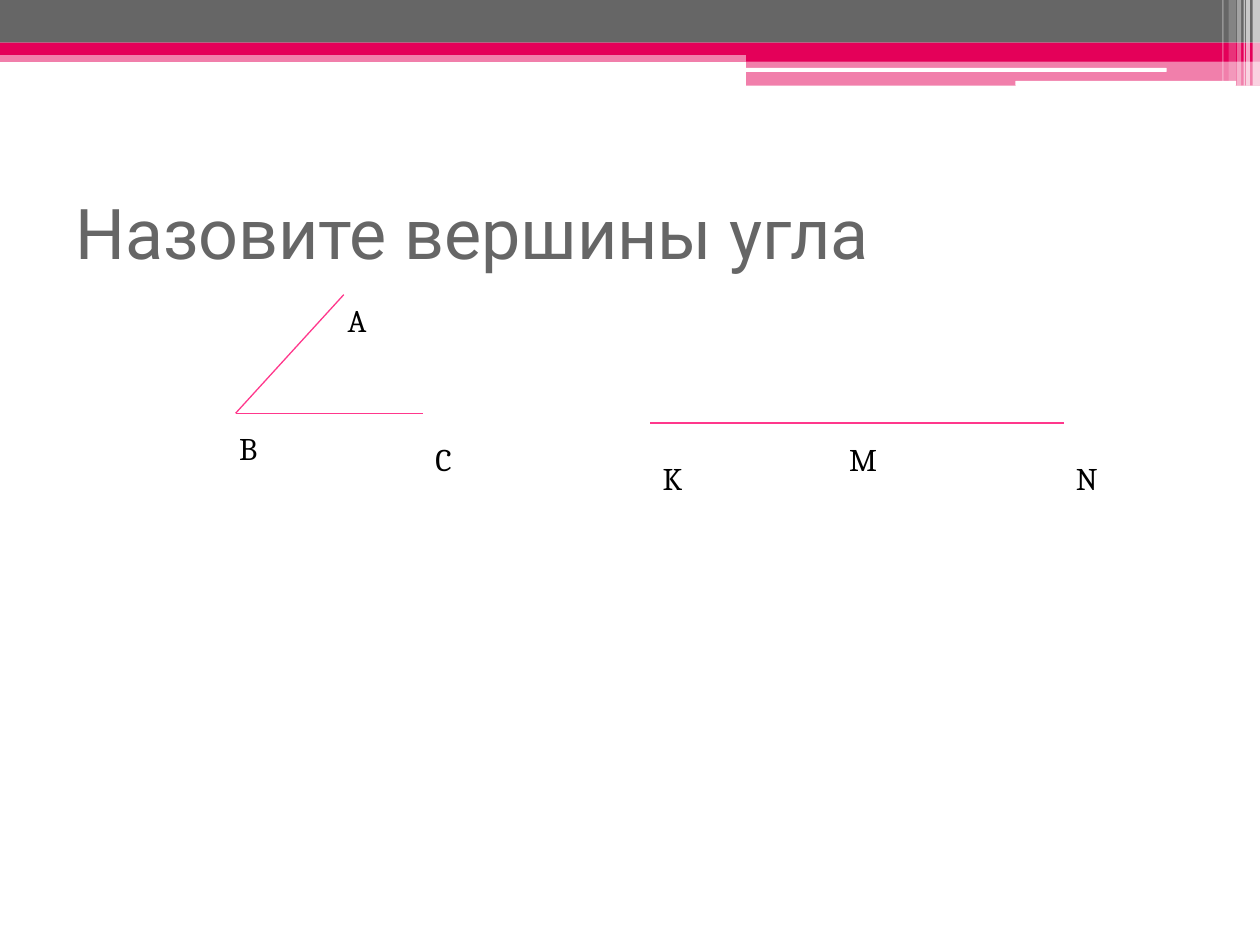
from lxml import etree
from pptx import Presentation
from pptx.dml.color import RGBColor
from pptx.enum.shapes import MSO_CONNECTOR, MSO_SHAPE
from pptx.enum.text import MSO_ANCHOR, MSO_AUTO_SIZE
from pptx.oxml.ns import qn
from pptx.util import Cm, Pt

RECT = MSO_SHAPE.RECTANGLE
ROUND = MSO_SHAPE.ROUNDED_RECTANGLE
LINE = MSO_CONNECTOR.STRAIGHT
MID = MSO_ANCHOR.MIDDLE
TOP = MSO_ANCHOR.TOP
GROW = MSO_AUTO_SIZE.SHAPE_TO_FIT_TEXT
FIXED = MSO_AUTO_SIZE.NONE
PINK, GRAY, WHITE, BLACK, ROSE = "E40059", "666666", "FFFFFF", "000000", "FF388C"
WIDE = 25.4

BARS = [
    (0, 1.02, WIDE, 0.23, PINK, 50, RECT),
    (0, 0, WIDE, 0.86, GRAY, 100, RECT),
    (0, 0.86, WIDE, 0.25, PINK, 100, RECT),
    (15.04, 0.99, 10.36, 0.25, PINK, 100, RECT),
    (15.04, 1.22, 10.36, 0.51, PINK, 50, RECT),
    (15.01, 1.37, 8.51, 0.08, WHITE, 100, ROUND),
    (20.47, 1.63, 4.45, 0.1, WHITE, 100, ROUND),
]
STRIPS = [
    (25.25, 0.15, 1.73, 65),
    (25.12, 0.08, 1.73, 65),
    (25.07, 0.03, 1.73, 60),
    (24.94, 0.08, 1.73, 40),
    (24.77, 0.15, 1.63, 20),
    (24.64, 0.03, 1.63, 30),
]
RAYS = [
    (4.75, 8.33, 8.53, 8.33),
    (4.75, 8.33, 6.93, 5.94),
    (13.11, 8.53, 17.48, 8.53),
    (17.27, 8.53, 21.44, 8.53),
]
LABELS = [
    ("B", 4.57, 8.53, 0.86),
    ("A", 6.76, 5.94, 0.89),
    ("C", 8.53, 8.74, 0.86),
    ("K", 13.11, 9.12, 0.84),
    ("M", 16.87, 8.74, 1.07),
    ("N", 21.44, 9.12, 0.91),
]


def paint(color):
    """Turn a hex string into a colour."""
    return RGBColor.from_string(color)


def add_bar(slide, left, top, width, height, color, alpha=100, kind=RECT):
    """Draw a filled bar without outline, alpha in percent."""
    bar = slide.shapes.add_shape(kind, Cm(left), Cm(top), Cm(width), Cm(height))
    bar.shadow.inherit = False
    bar.line.fill.background()
    bar.fill.solid()
    bar.fill.fore_color.rgb = paint(color)
    if alpha < 100:
        tone = bar.fill._xPr.find(qn("a:solidFill"))[0]
        etree.SubElement(tone, qn("a:alpha"), val=str(alpha * 1000))


def add_ray(slide, left, top, right, low):
    """Draw one thin side of an angle."""
    ray = slide.shapes.add_connector(LINE, Cm(left), Cm(top), Cm(right), Cm(low))
    ray.line.color.rgb = paint(ROSE)
    ray.line.width = Pt(0.75)
    etree.SubElement(ray._element.spPr, qn("a:effectLst"))


def add_text(slide, text, left, top, width, height, *, size=18, font="Cambria",
             color=BLACK, anchor=TOP, wrap=False, fit=GROW):
    """Place a line of formatted text."""
    box = slide.shapes.add_textbox(Cm(left), Cm(top), Cm(width), Cm(height))
    frame = box.text_frame
    frame.word_wrap = wrap
    frame.auto_size = fit
    frame.vertical_anchor = anchor
    run = frame.paragraphs[0].add_run()
    run.text = text
    run.font.size = Pt(size)
    run.font.name = font
    run.font.color.rgb = paint(color)


def main():
    """Build the slide on naming the vertices of angles."""
    deck = Presentation()
    deck.slide_width, deck.slide_height = Cm(WIDE), Cm(19.05)
    slide = deck.slides.add_slide(deck.slide_layouts[6])
    for bar in BARS:
        add_bar(slide, *bar)
    for left, width, height, alpha in STRIPS:
        add_bar(slide, left, 0, width, height, WHITE, alpha)
    add_text(slide, "Назовите вершины угла", 1.27, 3.18, 22.86, 2.97, size=40,
             font="Roboto", color=GRAY, anchor=MID, wrap=True, fit=FIXED)
    for ray in RAYS:
        add_ray(slide, *ray)
    for name, left, top, width in LABELS:
        add_text(slide, name, left, top, width, 1.02)
    deck.save("out.pptx")


if __name__ == "__main__":
    main()
